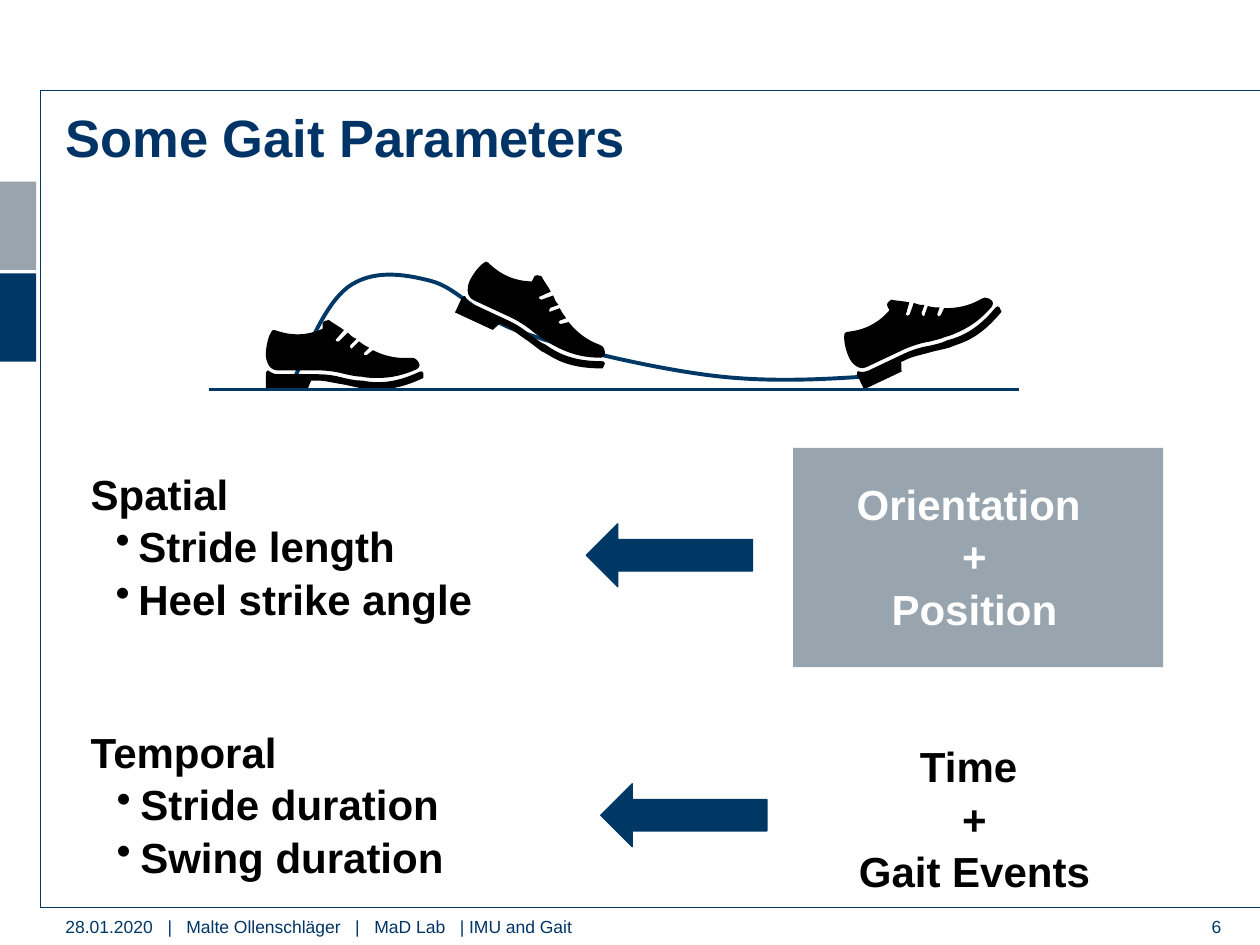
from math import cos, radians, sin

from lxml import etree
from pptx import Presentation
from pptx.dml.color import RGBColor
from pptx.enum.shapes import MSO_CONNECTOR, MSO_SHAPE
from pptx.enum.text import MSO_ANCHOR, PP_ALIGN
from pptx.oxml.ns import qn
from pptx.util import Cm, Pt

RECTANGLE, LEFT_ARROW = MSO_SHAPE.RECTANGLE, MSO_SHAPE.LEFT_ARROW
STRAIGHT = MSO_CONNECTOR.STRAIGHT
TOP, MIDDLE = MSO_ANCHOR.TOP, MSO_ANCHOR.MIDDLE
LEFT, CENTER, RIGHT = PP_ALIGN.LEFT, PP_ALIGN.CENTER, PP_ALIGN.RIGHT

COLORS = {"navy": "003865", "title": "003366", "gray": "98A4AE",
          "black": "000000", "white": "FFFFFF"}
FONT = "Arial"
PARA_GAP, GROUP_GAP = 1.2, 58.8

# Content
TITLE = "Some Gait Parameters"
DATE, PAGE_NUMBER = "28.01.2020", "6"
FOOTER = "|\tMalte Ollenschläger\t|\tMaD Lab\t| IMU and Gait"
FOOTER_TABS = [0.38, 3.78, 4.17, 5.89]
PARAMETERS = [
    ("Spatial", ["Stride length", "Heel strike angle"], 0.96, 0.46),
    ("Temporal", ["Stride duration", "Swing duration"], 1.0, 0.48),
]
SOURCES = [  # lines, text top, color
    (["Time ", "+", "Gait Events"], 14.76, "black"),
    (["Orientation ", "+", "Position"], 9.47, "white"),
]
ARROWS = [(12.11, 15.8), (11.82, 10.56)]
SIDE_BARS = [(5.51, "navy"), (3.66, "gray")]

# Outlines in drawing units: a start, then lines (2 numbers) and curves (6 numbers)
UNIT = Cm(2.54) / 100
FRAME = [(1000, 72), (32, 72), (32, 720), (1000, 720), (949, 720)]
FOOT_PATH = [
    (231, 307), (245, 274, 258, 242, 276, 228), (295, 214, 319, 217, 342, 223),
    (365, 229, 378, 252, 415, 264), (452, 277, 517, 292, 564, 298),
    (612, 304, 656, 301, 700, 298),
]
SOLE = [
    (76, 48), (75, 48), (71, 48, 67, 47, 62, 46), (55, 44, 48, 43, 41, 43),
    (10, 43), (7, 43, 4, 42, 2, 40), (2, 40, 0, 40, 0, 42), (0, 55), (33, 55),
    (36, 48), (41, 48), (47, 48, 54, 50, 61, 51), (66, 52, 70, 53, 75, 54),
    (75, 54), (79, 54, 84, 55, 90, 55), (99, 55, 110, 53, 125, 46), (125, 42),
    (125, 41, 123, 40, 122, 41), (101, 51, 87, 50, 76, 48),
]
UPPER = [
    (115, 30), (103, 31, 93, 28, 85, 24), (80, 28), (80, 28, 80, 28, 79, 28),
    (79, 28, 79, 28, 78, 28), (78, 27, 78, 27, 78, 26), (82, 22),
    (79, 21, 77, 19, 74, 17), (69, 22), (69, 23, 68, 23, 68, 23),
    (68, 23, 67, 23, 67, 22), (67, 22, 67, 21, 67, 20), (72, 15),
    (69, 14, 67, 12, 65, 10), (58, 17), (57, 17, 57, 17, 57, 17),
    (56, 17, 56, 17, 56, 17), (55, 16, 55, 15, 56, 15), (62, 8),
    (58, 5, 54, 3, 50, 0), (48, 0, 45, 1, 45, 3), (45, 7),
    (27, 15, 13, 10, 7, 8), (6, 8, 4, 8, 4, 10), (1, 15, 0, 24, 0, 27),
    (0, 34, 3, 37, 4, 38), (5, 39, 7, 40, 10, 40), (41, 40),
    (48, 40, 56, 41, 63, 43), (68, 44, 72, 45, 76, 45), (76, 45),
    (80, 46, 85, 46, 89, 46), (99, 46, 109, 44, 120, 39),
    (121, 38, 122, 37, 122, 36), (122, 34, 119, 29, 115, 30),
]
SOLE_CENTER = (62.5, 47.5)
SHOES = [(273.5, 301.5, 0), (421, 267.5, 24.9), (739, 275.5, -25.3)]  # x, y, turn

deck = Presentation()
deck.slide_width, deck.slide_height = Cm(25.4), Cm(19.05)
page = deck.slides.add_slide(deck.slide_layouts[6])
shapes = page.shapes


def color(name):
    return RGBColor.from_string(COLORS[name])


def paint(shape, fill=None, line=None, width=0.75):
    shape.shadow.inherit = False
    if fill:
        shape.fill.solid()
        shape.fill.fore_color.rgb = color(fill)
    else:
        shape.fill.background()
    if line:
        shape.line.color.rgb = color(line)
        shape.line.width = Pt(width)
    else:
        shape.line.fill.background()


def add_preset(kind, left, top, width, height, fill, line=None):
    shape = shapes.add_shape(kind, Cm(left), Cm(top), Cm(width), Cm(height))
    paint(shape, fill, line)


def add_outline(outline, closed=False):
    points = [(part[i] * UNIT, part[i + 1] * UNIT)
              for part in outline for i in range(0, len(part), 2)]
    builder = shapes.build_freeform(*points[0])
    builder.add_line_segments(points[1:], close=closed)
    shape = builder.convert_to_shape()
    # Every curve was laid down as three segments: join them into one
    segments = iter(list(shape._element.iter(qn("a:lnTo"))))
    for part in outline[1:]:
        first = next(segments)
        if len(part) == 6:
            curve = etree.Element(qn("a:cubicBezTo"))
            first.addprevious(curve)
            for segment in (first, next(segments), next(segments)):
                curve.append(segment[0])
                segment.getparent().remove(segment)
    return shape


def add_shoe(x, y, turn):
    cosine, sine = cos(radians(turn)), sin(radians(turn))
    for outline in (SOLE, UPPER):
        part = add_outline(outline, closed=True)
        dx = part.left + part.width / 2 - SOLE_CENTER[0] * UNIT
        dy = part.top + part.height / 2 - SOLE_CENTER[1] * UNIT
        part.left = round(x * UNIT + dx * cosine - dy * sine - part.width / 2)
        part.top = round(y * UNIT + dx * sine + dy * cosine - part.height / 2)
        part.rotation = turn
        paint(part, "black")


def add_text(lines, left, top, width, height, size, ink, bold=False, align=LEFT,
             anchor=TOP, insets=(0, 0, 0, 0), gap=0, tabs=()):
    frame = shapes.add_textbox(Cm(left), Cm(top), Cm(width), Cm(height)).text_frame
    frame.word_wrap = True
    frame.vertical_anchor = anchor
    (frame.margin_left, frame.margin_top,
     frame.margin_right, frame.margin_bottom) = map(Cm, insets)
    for index, line in enumerate(lines):
        para = frame.paragraphs[0] if index == 0 else frame.add_paragraph()
        para.text = line
        para.alignment = align
        if index and gap:
            para.space_before = Pt(gap)
        if tabs:
            tab_list = etree.SubElement(para._p.get_or_add_pPr(), qn("a:tabLst"))
            for stop in tabs:
                etree.SubElement(tab_list, qn("a:tab"), pos=str(Cm(stop)), algn="l")
        font = para.font
        font.name, font.size, font.bold = FONT, Pt(size), bold
        font.color.rgb = color(ink)
    return frame


def add_bullet(para, margin, hanging):
    properties = para._p.get_or_add_pPr()
    properties.set("marL", str(Cm(margin)))
    properties.set("indent", str(-Cm(hanging)))
    bullet = etree.Element(qn("a:buChar"), char="•")
    properties.find(qn("a:defRPr")).addprevious(bullet)


# Page frame and footer
add_text([FOOTER], 3.38, 18.34, 10.01, 0.69, 10, "title",
         insets=(0, 0.13, 0.25, 0.13), tabs=FOOTER_TABS)
for top, fill in SIDE_BARS:
    add_preset(RECTANGLE, 0, top, 0.73, 1.78, fill)
paint(add_outline(FRAME), line="navy")
add_text([DATE], 1.32, 18.42, 2.01, 0.53, 10, "navy", anchor=MIDDLE)
add_text([PAGE_NUMBER], 22.97, 18.42, 1.65, 0.53, 10, "navy", align=RIGHT, anchor=MIDDLE)
add_preset(RECTANGLE, 15.99, 9.03, 7.46, 4.42, "gray")
add_text([TITLE], 1.32, 2.11, 22.61, 0.99, 30, "title", bold=True)

# Stride drawing
paint(add_outline(FOOT_PATH), line="navy", width=2.25)
for shoe in SHOES:
    add_shoe(*shoe)
ground = shapes.add_connector(STRAIGHT, Cm(4.22), Cm(7.85), Cm(20.55), Cm(7.85))
ground.line.color.rgb = color("navy")
ground.line.width = Pt(2)
etree.SubElement(ground._element.spPr, qn("a:effectLst"))

# Parameter lists
body = {"size": 24, "bold": True, "insets": (0.25, 0.17, 0.25, 0.13), "gap": PARA_GAP}
all_lines = [line for head, items, *_ in PARAMETERS for line in (head, *items)]
paras = iter(add_text(all_lines, 1.58, 9.27, 22.33, 8.46, ink="black", **body).paragraphs)
for index, (_, items, margin, hanging) in enumerate(PARAMETERS):
    heading = next(paras)
    if index:
        heading.space_before = Pt(GROUP_GAP)
    for _ in items:
        add_bullet(next(paras), margin, hanging)

# Arrows and the signals they come from
for left, top in ARROWS:
    add_preset(LEFT_ARROW, left, top, 3.35, 1.27, "navy", "navy")
for lines, top, ink in SOURCES:
    add_text(lines, 16.19, top, 6.91, 3.33, ink=ink, align=CENTER, **body)

deck.save("out.pptx")
